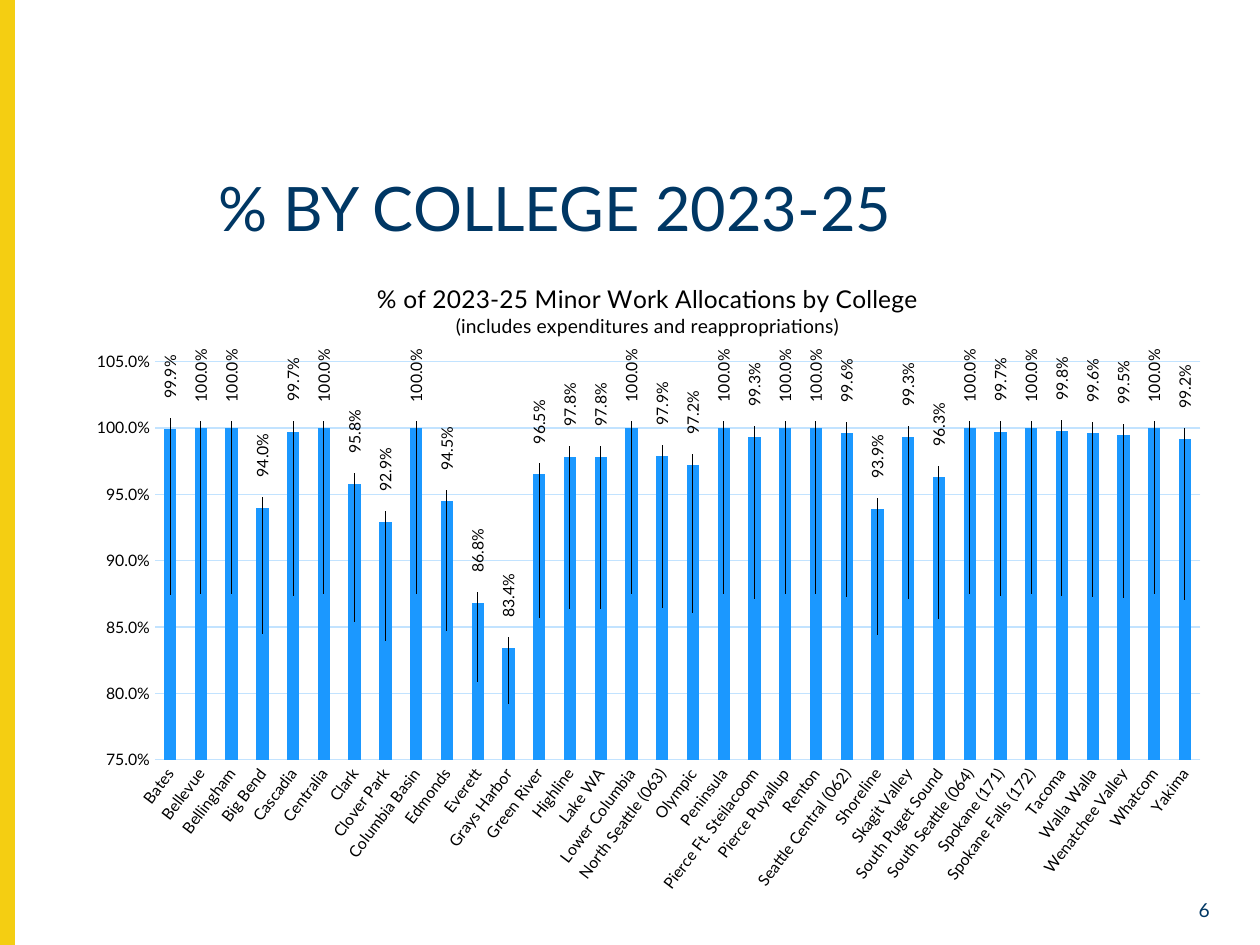
from dataclasses import dataclass

from lxml.etree import SubElement
from pptx import Presentation
from pptx.chart.data import CategoryChartData
from pptx.dml.color import RGBColor
from pptx.enum.chart import XL_CHART_TYPE, XL_LABEL_POSITION, XL_TICK_MARK
from pptx.enum.shapes import MSO_SHAPE
from pptx.enum.text import MSO_ANCHOR, PP_ALIGN
from pptx.oxml import parse_xml
from pptx.oxml.ns import nsdecls, qn
from pptx.util import Inches, Pt


@dataclass(frozen=True)
class Theme:
    """Colours, type sizes and font of the slide."""

    navy: RGBColor = RGBColor.from_string("003764")
    yellow: RGBColor = RGBColor.from_string("F4CE12")
    blue: RGBColor = RGBColor.from_string("1B98FF")
    pale: RGBColor = RGBColor.from_string("C2E3FF")
    black: RGBColor = RGBColor.from_string("000000")
    font: str = "Lato"
    title: int = 35
    heading: int = 14
    subheading: int = 11
    number: int = 11
    chart: int = 10
    label: int = 9


THEME = Theme()
AXIS_MIN, AXIS_MAX, AXIS_STEP = 0.75, 1.05, 0.05
PLOT_HEIGHT = 0.61
LABEL_GAP = 0.08
SHARES = {
    "Bates": 0.999, "Bellevue": 1, "Bellingham": 1, "Big Bend": 0.94,
    "Cascadia": 0.997, "Centralia": 1, "Clark": 0.958, "Clover Park": 0.929,
    "Columbia Basin": 1, "Edmonds": 0.945, "Everett": 0.868,
    "Grays Harbor": 0.834, "Green River": 0.965, "Highline": 0.978,
    "Lake WA": 0.978, "Lower Columbia": 1, "North Seattle (063)": 0.979,
    "Olympic": 0.972, "Peninsula": 1, "Pierce Ft. Steilacoom": 0.993,
    "Pierce Puyallup": 1, "Renton": 1, "Seattle Central (062)": 0.996,
    "Shoreline": 0.939, "Skagit Valley": 0.993, "South Puget Sound": 0.963,
    "South Seattle (064)": 1, "Spokane (171)": 0.997,
    "Spokane Falls (172)": 1, "Tacoma": 0.998, "Walla Walla": 0.996,
    "Wenatchee Valley": 0.995, "Whatcom": 1, "Yakima": 0.992,
}


def style_font(font, size, color):
    """Apply the theme font with a size and a colour."""
    font.name = THEME.font
    font.size = Pt(size)
    font.color.rgb = color
    font.bold = False


def manual_layout(**settings):
    """Return a chart layout element with the given settings."""
    layout = parse_xml(f"<c:layout {nsdecls('c')}><c:manualLayout/></c:layout>")
    for tag, value in settings.items():
        SubElement(layout[0], qn(f"c:{tag}")).set("val", str(value))
    return layout


def rotate_text(element, degrees):
    """Turn the text of a chart element."""
    body = element.find(qn("c:txPr")).find(qn("a:bodyPr"))
    body.set("rot", str(degrees * 60000))
    body.set("vert", "horz")


def add_side_band(slide):
    """Draw the yellow band along the left edge."""
    band = slide.shapes.add_shape(
        MSO_SHAPE.RECTANGLE, 0, 0, Inches(0.11), Inches(7.5))
    band.shadow.inherit = False
    band.fill.solid()
    band.fill.fore_color.rgb = THEME.yellow
    band.line.color.rgb = THEME.yellow
    band.line.width = Pt(1)


def set_title(slide, text):
    """Place and format the title placeholder."""
    title = slide.shapes.title
    title.left, title.top = Inches(0.44), Inches(1.42)
    title.width, title.height = Inches(7.93), Inches(0.57)
    frame = title.text_frame
    frame.text = text
    frame.vertical_anchor = MSO_ANCHOR.BOTTOM
    paragraph = frame.paragraphs[0]
    paragraph.alignment = PP_ALIGN.CENTER
    paragraph.line_spacing = 0.9
    style_font(paragraph.runs[0].font, THEME.title, THEME.navy)


def add_slide_number(slide, number):
    """Write the slide number at the lower right."""
    box = slide.shapes.add_textbox(
        Inches(9.19), Inches(7.09), Inches(0.51), Inches(0.26))
    frame = box.text_frame
    frame.word_wrap = True
    frame.vertical_anchor = MSO_ANCHOR.MIDDLE
    frame.text = number
    frame.paragraphs[0].alignment = PP_ALIGN.RIGHT
    style_font(frame.paragraphs[0].runs[0].font, THEME.number, THEME.navy)


def set_chart_title(chart, heading, subheading):
    """Give the chart its two-line title."""
    frame = chart.chart_title.text_frame
    frame.text = f"{heading}\n{subheading}"
    sizes = (THEME.heading, THEME.subheading)
    for paragraph, size in zip(frame.paragraphs, sizes):
        style_font(paragraph.runs[0].font, size, THEME.black)
    title = chart.element.find(".//" + qn("c:title"))
    for layout in title.findall(qn("c:layout")):
        title.remove(layout)
    title.find(qn("c:tx")).addnext(
        manual_layout(xMode="edge", yMode="edge", x=0.26, y=0.04))


def format_axes(chart):
    """Format both axes and the gridlines."""
    for axis in (chart.category_axis, chart.value_axis):
        axis.major_tick_mark = XL_TICK_MARK.NONE
        axis.minor_tick_mark = XL_TICK_MARK.NONE
        style_font(axis.tick_labels.font, THEME.label, THEME.black)
    shares = chart.value_axis
    shares.minimum_scale, shares.maximum_scale = AXIS_MIN, AXIS_MAX
    shares.major_unit = AXIS_STEP
    shares.tick_labels.number_format = "0.0%"
    shares.tick_labels.number_format_is_linked = False
    shares.format.line.fill.background()
    for line in (chart.category_axis.format.line,
                 shares.major_gridlines.format.line):
        line.color.rgb = THEME.pale
        line.width = Pt(0.75)
    rotate_text(chart.element.find(".//" + qn("c:catAx")), -53)


def add_bar_labels(series, chart):
    """Lift an upright value label above the top of every bar."""
    labels = series.data_labels
    labels.show_value = True
    labels.number_format = "0.0%"
    labels.number_format_is_linked = False
    labels.position = XL_LABEL_POSITION.CENTER
    style_font(labels.font, THEME.label, THEME.black)
    for index in range(len(SHARES)):
        label = series.points[index].data_label
        style_font(label.font, THEME.label, THEME.black)
        label.position = XL_LABEL_POSITION.CENTER
    rotate_text(chart.element.find(".//" + qn("c:ser")).find(qn("c:dLbls")), -90)
    for element, share in zip(chart.element.iter(qn("c:dLbl")), series.values):
        rotate_text(element, -90)
        half_bar = (share - AXIS_MIN) / (AXIS_MAX - AXIS_MIN) * PLOT_HEIGHT / 2
        element.find(qn("c:idx")).addnext(
            manual_layout(x=0, y=round(-half_bar - LABEL_GAP, 4)))


def add_college_chart(slide):
    """Add the column chart of allocation shares by college."""
    data = CategoryChartData(number_format="0.0%")
    data.categories = list(SHARES)
    data.add_series("Series 1", list(SHARES.values()))
    chart = slide.shapes.add_chart(
        XL_CHART_TYPE.COLUMN_STACKED, Inches(0.59), Inches(1.99),
        Inches(9.12), Inches(5.18), data).chart
    style_font(chart.font, THEME.chart, THEME.navy)
    chart.has_legend = False
    set_chart_title(chart, "% of 2023-25 Minor Work Allocations by College",
                    "(includes expenditures and reappropriations)")
    plot = chart.plots[0]
    plot.vary_by_categories = False
    plot.gap_width, plot.overlap = 150, 100
    series = plot.series[0]
    series.format.fill.solid()
    series.format.fill.fore_color.rgb = THEME.blue
    format_axes(chart)
    add_bar_labels(series, chart)
    area = chart.element.find(".//" + qn("c:plotArea"))
    for layout in area.findall(qn("c:layout")):
        area.remove(layout)
    area.insert(0, manual_layout(
        layoutTarget="inner", xMode="edge", yMode="edge",
        x=0.07, y=0.17, w=0.91, h=PLOT_HEIGHT))


def main():
    """Build and save the slide."""
    deck = Presentation()
    deck.slide_width, deck.slide_height = Inches(10), Inches(7.5)
    slide = deck.slides.add_slide(deck.slide_layouts[5])
    add_side_band(slide)
    set_title(slide, "% BY COLLEGE 2023-25")
    add_college_chart(slide)
    add_slide_number(slide, "6")
    deck.save("out.pptx")


if __name__ == "__main__":
    main()
